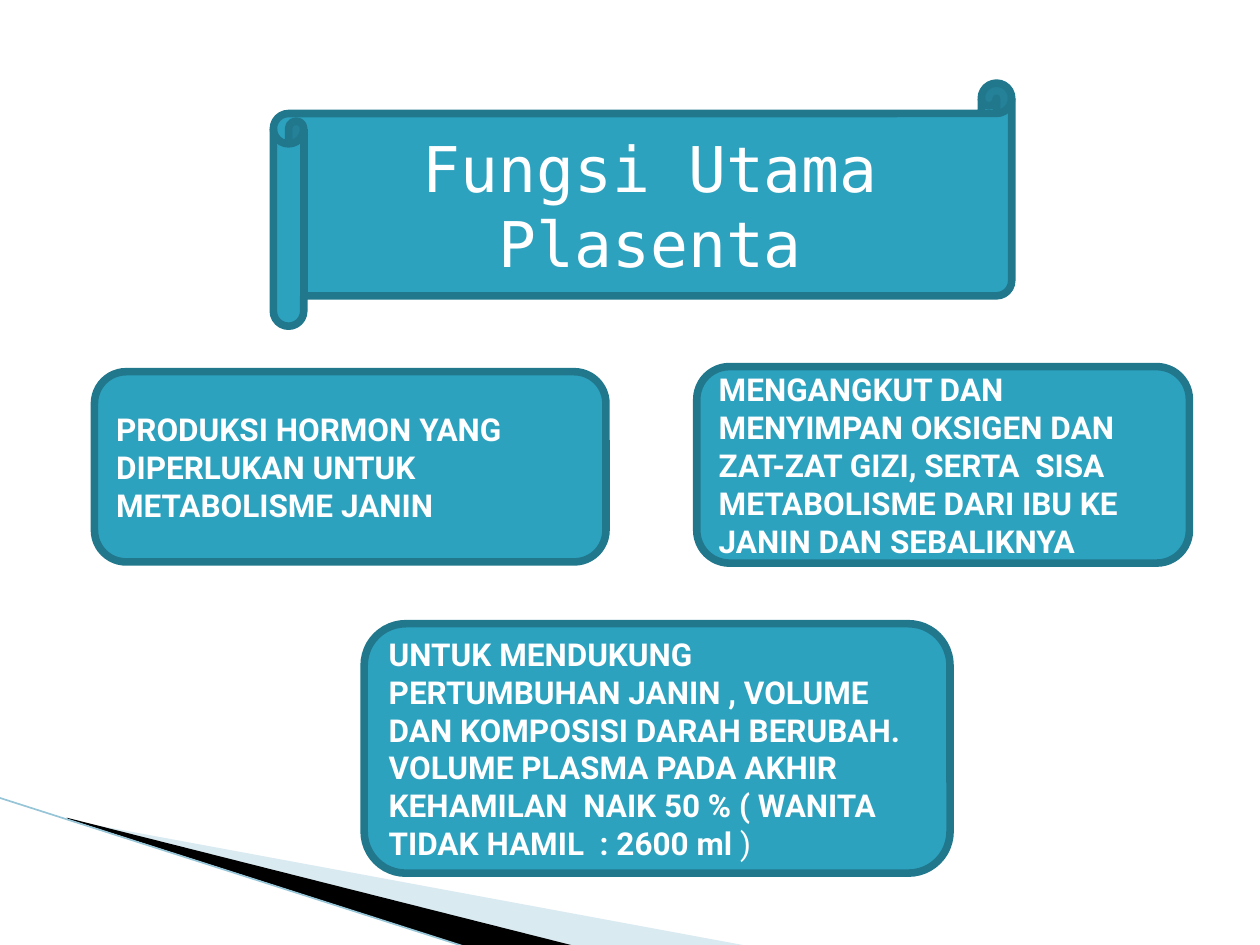
from dataclasses import dataclass

from lxml.etree import SubElement
from pptx import Presentation
from pptx.dml.color import RGBColor
from pptx.enum.shapes import MSO_CONNECTOR, MSO_SHAPE
from pptx.enum.text import MSO_ANCHOR, MSO_AUTO_SIZE, PP_ALIGN
from pptx.oxml.ns import qn
from pptx.util import Inches, Pt


@dataclass(frozen=True)
class Theme:
    panel: str = "2DA2BF"
    outline: str = "21788D"
    text: str = "FFFFFF"
    pale_wedge: str = "A0CBDC"
    dark_wedge: str = "000000"
    edge: str = "97C5D8"
    title_font: str = "DejaVu Sans Mono"
    body_font: str = "Roboto"
    title_size: float = 36
    body_size: float = 18
    outline_width: float = 4.33
    edge_width: float = 0.95


class SlideBuilder:
    def __init__(self, slide, theme):
        self.slide = slide
        self.theme = theme

    def format_run(self, run, font_name, size, bold=False):
        run.font.name = font_name
        run.font.size = Pt(size)
        run.font.bold = bold
        run.font.color.rgb = RGBColor.from_string(self.theme.text)

    def wedge(self, points, color, opacity=None):
        """Draw a filled outline; opacity is a percentage."""
        corners = [(Inches(x), Inches(y)) for x, y in points]
        builder = self.slide.shapes.build_freeform(*corners[0])
        builder.add_line_segments(corners[1:], close=True)
        wedge = builder.convert_to_shape()
        wedge.shadow.inherit = False
        wedge.line.fill.background()
        wedge.fill.solid()
        wedge.fill.fore_color.rgb = RGBColor.from_string(color)
        if opacity is not None:
            color_element = wedge.element.spPr.find(f"{qn('a:solidFill')}/{qn('a:srgbClr')}")
            SubElement(color_element, qn("a:alpha"), val=str(opacity * 1000))

    def edge(self, start, end):
        edge = self.slide.shapes.add_connector(
            MSO_CONNECTOR.STRAIGHT, *map(Inches, start + end))
        edge.line.color.rgb = RGBColor.from_string(self.theme.edge)
        edge.line.width = Pt(self.theme.edge_width)
        SubElement(edge.element.spPr, qn("a:effectLst"))

    def panel(self, preset, bounds):
        panel = self.slide.shapes.add_shape(preset, *map(Inches, bounds))
        panel.shadow.inherit = False
        panel.fill.solid()
        panel.fill.fore_color.rgb = RGBColor.from_string(self.theme.panel)
        panel.line.color.rgb = RGBColor.from_string(self.theme.outline)
        panel.line.width = Pt(self.theme.outline_width)
        return panel

    def title(self, text, bounds):
        """Set the title on a scroll, inside the flat part of its sheet."""
        scroll = self.panel(MSO_SHAPE.HORIZONTAL_SCROLL, bounds)
        left, top, width, height = bounds
        roll = height / 8
        title = self.slide.shapes.title
        title.left, title.top = Inches(left + roll), Inches(top + roll)
        title.width, title.height = Inches(width - 1.5 * roll), Inches(height - 2 * roll)
        scroll.element.addnext(title.element)

        frame = title.text_frame
        frame.text = text
        frame.word_wrap = True
        frame.auto_size = MSO_AUTO_SIZE.NONE
        frame.vertical_anchor = MSO_ANCHOR.MIDDLE
        paragraph = frame.paragraphs[0]
        paragraph.alignment = PP_ALIGN.CENTER
        self.format_run(paragraph.runs[0], self.theme.title_font, self.theme.title_size)

    def function_box(self, bounds, text, ending=""):
        """Add a rounded box of bold text with an optional regular ending."""
        frame = self.panel(MSO_SHAPE.ROUNDED_RECTANGLE, bounds).text_frame
        frame.text = text
        frame.word_wrap = True
        frame.vertical_anchor = MSO_ANCHOR.MIDDLE
        paragraph = frame.paragraphs[0]
        paragraph.alignment = PP_ALIGN.LEFT
        self.format_run(paragraph.runs[0], self.theme.body_font, self.theme.body_size, bold=True)
        if ending:
            closing = paragraph.add_run()
            closing.text = ending
            self.format_run(closing, self.theme.body_font, self.theme.body_size)


FUNCTIONS = [
    ((0.75, 2.95, 4.06, 1.51),
     "PRODUKSI HORMON YANG DIPERLUKAN UNTUK METABOLISME JANIN", ""),
    ((5.53, 2.91, 3.91, 1.56),
     "MENGANGKUT DAN MENYIMPAN OKSIGEN DAN ZAT-ZAT GIZI, SERTA  SISA "
     "METABOLISME DARI IBU KE JANIN DAN SEBALIKNYA", ""),
    ((2.89, 4.95, 4.65, 1.98),
     "UNTUK MENDUKUNG PERTUMBUHAN JANIN , VOLUME DAN KOMPOSISI DARAH BERUBAH. "
     "VOLUME PLASMA PADA AKHIR KEHAMILAN  NAIK 50 % ( WANITA TIDAK HAMIL  : 2600 ml",
     " )"),
]


def main():
    presentation = Presentation()
    presentation.slide_width = Inches(10)
    presentation.slide_height = Inches(7.5)
    theme = Theme()
    builder = SlideBuilder(
        presentation.slides.add_slide(presentation.slide_layouts[5]), theme)

    builder.wedge([(0.55, 6.51), (5.95, 7.51), (4.56, 7.51), (0.55, 6.5)],
                  theme.pale_wedge, opacity=40)
    builder.wedge([(0.53, 6.49), (4.57, 7.51), (3.72, 7.52), (0.54, 6.5)],
                  theme.dark_wedge)
    builder.edge((-0.01, 6.33), (3.71, 7.52))

    builder.title("Fungsi Utama Plasenta", (2.17, 0.66, 5.86, 1.93))
    for bounds, text, ending in FUNCTIONS:
        builder.function_box(bounds, text, ending)

    presentation.save("out.pptx")


if __name__ == "__main__":
    main()
